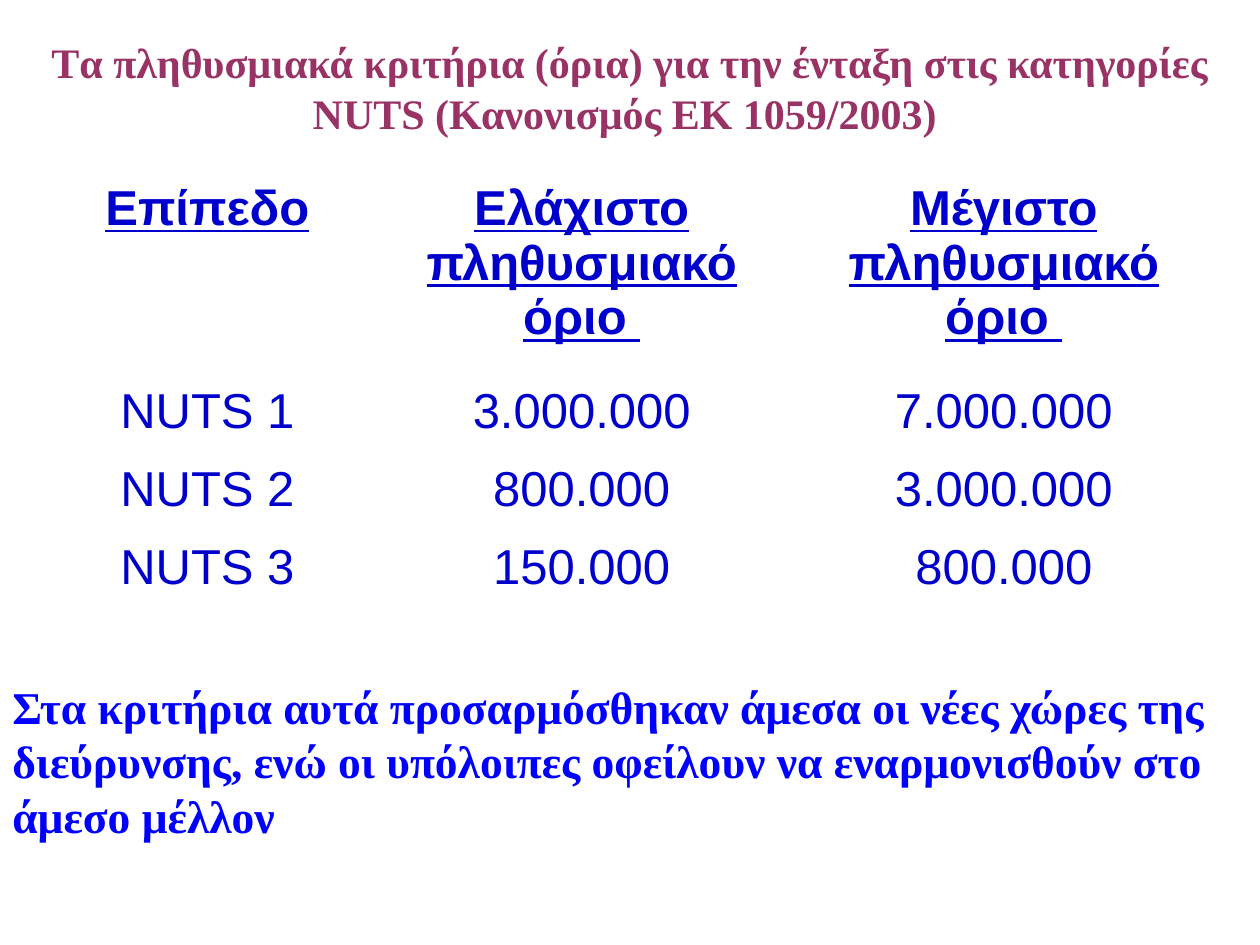
from pptx import Presentation
from pptx.dml.color import RGBColor
from pptx.enum import text as tx
from pptx.util import Cm, Pt

HUES = {"title": "993366", "table": "0000CC", "note": "0000FF"}
SERIF = "Times New Roman"
TITLE = ("Tα πληθυσμιακά κριτήρια (όρια) για την ένταξη στις κατηγορίες "
         "NUTS (Κανονισμός ΕΚ 1059/2003) ")
NOTE = ("Στα κριτήρια αυτά προσαρμόσθηκαν άμεσα οι νέες χώρες της διεύρυνσης, "
        "ενώ οι υπόλοιπες οφείλουν να εναρμονισθούν στο άμεσο μέλλον")
ROWS = [
    ("Επίπεδο", "Ελάχιστο πληθυσμιακό όριο ", "Μέγιστο πληθυσμιακό όριο "),
    ("NUTS 1", "3.000.000", "7.000.000"),
    ("NUTS 2", "800.000", "3.000.000"),
    ("NUTS 3", "150.000", "800.000"),
]


def style(frame, face, size, hue, align, bold=True, under=False):
    """Format every run in a text frame."""
    for para in frame.paragraphs:
        para.alignment = align
        for run in para.runs:
            font = run.font
            font.name, font.size = face, Pt(size)
            font.bold, font.underline = bold, under
            font.color.rgb = RGBColor.from_string(HUES[hue])


def add_text(slide, box, words, size, hue, align, anchor):
    """Place a bold serif text block in the box."""
    frame = slide.shapes.add_textbox(*map(Cm, box)).text_frame
    frame.word_wrap = True
    frame.vertical_anchor = anchor
    frame.text = words
    style(frame, SERIF, size, hue, align)


def add_limits(slide, box):
    """Place the table of population limits in the box."""
    left, top, width, height = box
    table = slide.shapes.add_table(len(ROWS), len(ROWS[0]), *map(Cm, box)).table
    table.first_row = table.horz_banding = False
    first, head = 6.58, 4.09
    for i, col in enumerate(table.columns):
        col.width = Cm(first if i == 0 else (width - first) / 2)
    for i, row in enumerate(table.rows):
        row.height = Cm(head if i == 0 else (height - head) / 3)
        for cell, words in zip(row.cells, ROWS[i]):
            cell.fill.background()
            cell.text = words
            style(cell.text_frame, "Arial", 28, "table", tx.PP_ALIGN.CENTER,
                  bold=i == 0, under=i == 0)


def main():
    """Build and save the slide."""
    deck = Presentation()
    deck.slide_width, deck.slide_height = Cm(25.4), Cm(19.05)
    slide = deck.slides.add_slide(deck.slide_layouts[6])
    add_limits(slide, (0.89, 3.53, 23.6, 8.82))
    add_text(slide, (0, 13.56, 25.4, 4.67), NOTE, 26, "note",
             tx.PP_ALIGN.LEFT, tx.MSO_ANCHOR.TOP)
    add_text(slide, (0, 0.61, 25.4, 2.29), TITLE, 24, "title",
             tx.PP_ALIGN.CENTER, tx.MSO_ANCHOR.MIDDLE)
    deck.save("out.pptx")


if __name__ == "__main__":
    main()
